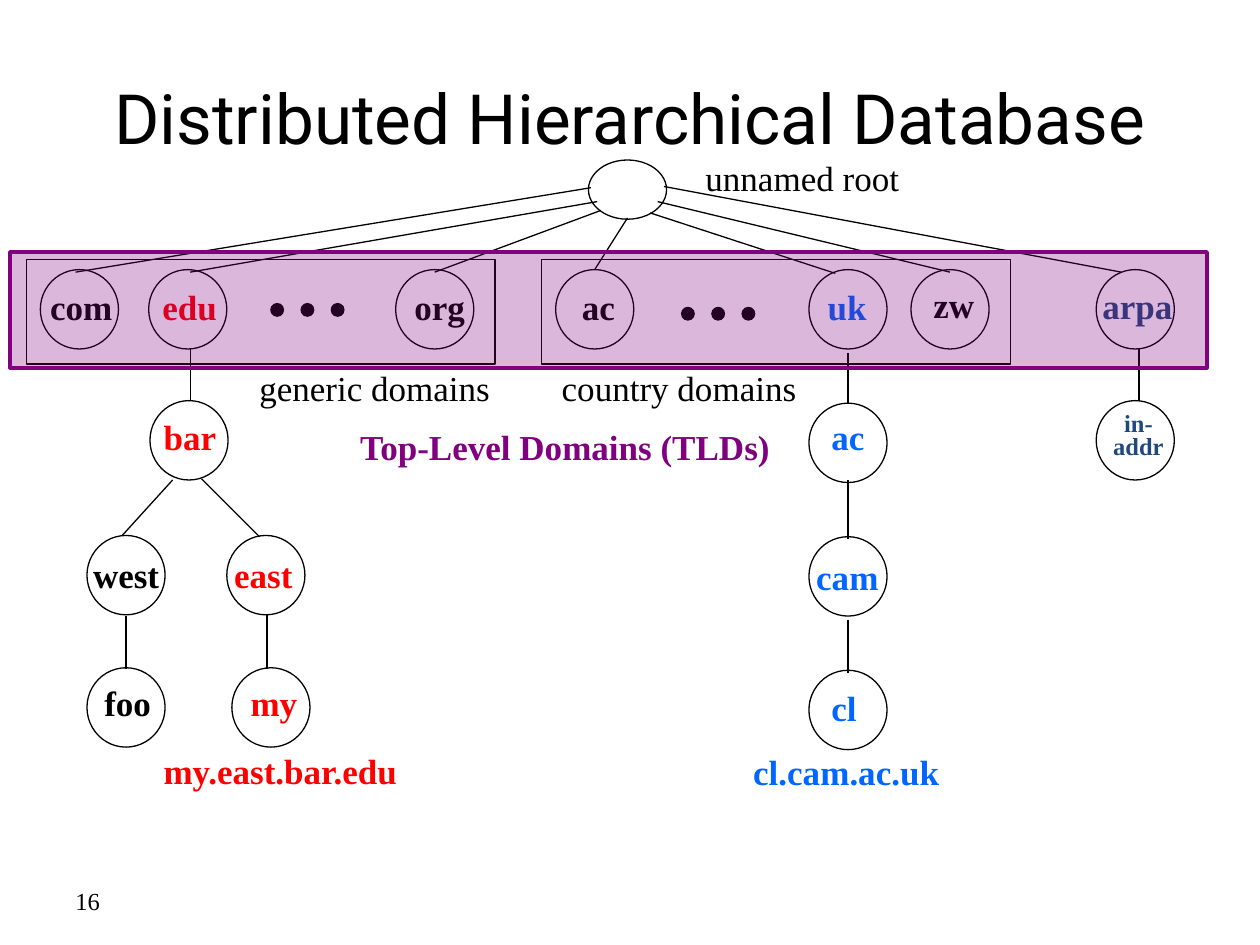
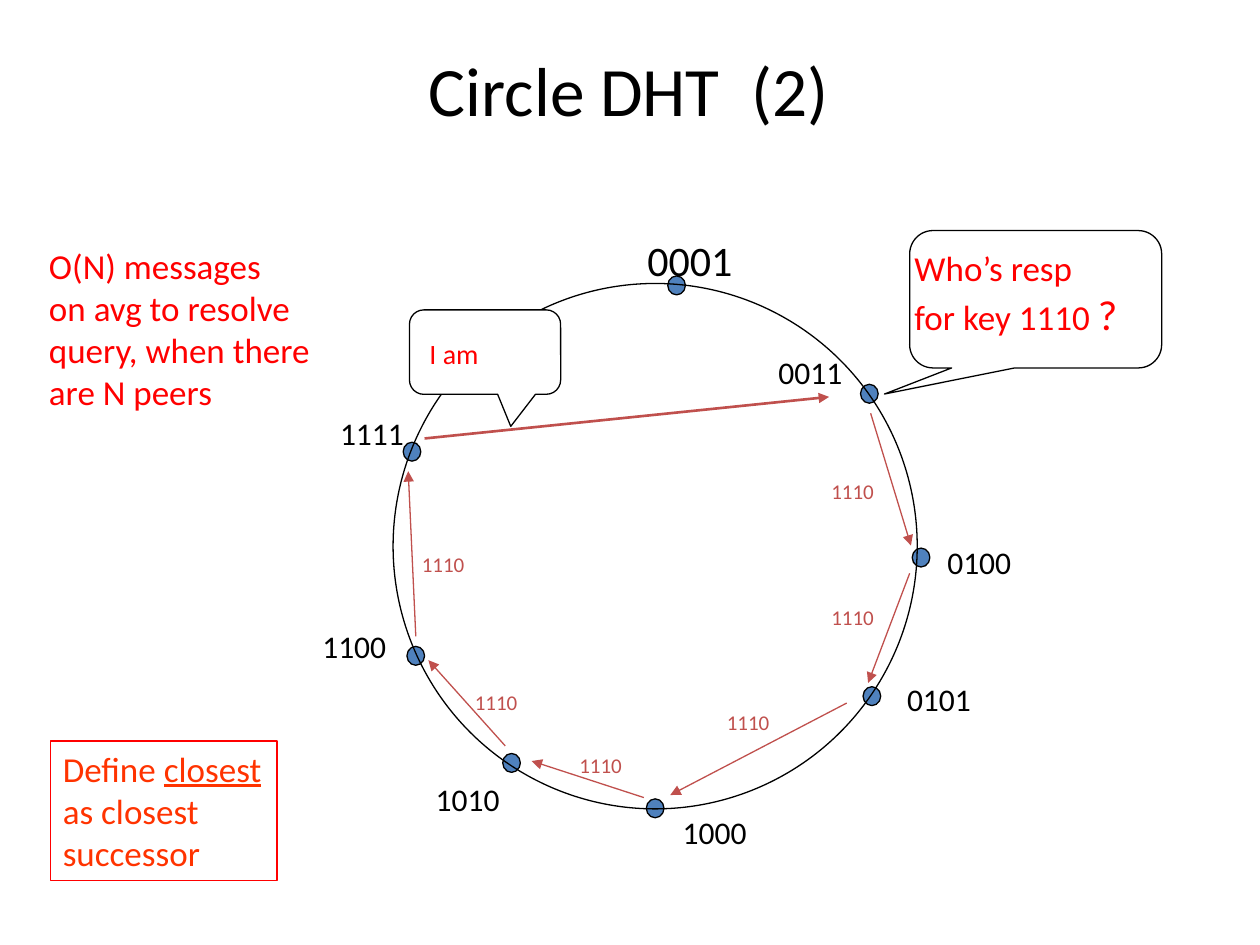
from lxml import etree
from pptx import Presentation
from pptx.dml.color import RGBColor
from pptx.enum.shapes import MSO_CONNECTOR, MSO_SHAPE
from pptx.enum.text import MSO_ANCHOR, PP_ALIGN
from pptx.oxml.ns import qn
from pptx.util import Inches, Pt

STRAIGHT = MSO_CONNECTOR.STRAIGHT
OVAL = MSO_SHAPE.OVAL
RECTANGLE = MSO_SHAPE.RECTANGLE
CALLOUT = MSO_SHAPE.ROUNDED_RECTANGULAR_CALLOUT
LEFT, CENTER = PP_ALIGN.LEFT, PP_ALIGN.CENTER
TOP, MIDDLE = MSO_ANCHOR.TOP, MSO_ANCHOR.MIDDLE

BLACK = RGBColor(0x00, 0x00, 0x00)
WHITE = RGBColor(0xFF, 0xFF, 0xFF)
RED = RGBColor(0xFF, 0x00, 0x00)
ORANGE_RED = RGBColor(0xFF, 0x33, 0x00)
BLUE = RGBColor(0x00, 0x66, 0xFF)
NAVY = RGBColor(0x1F, 0x49, 0x7D)
PURPLE = RGBColor(0x80, 0x00, 0x80)
PEER_BLUE = RGBColor(0x4F, 0x81, 0xBD)
BRICK = RGBColor(0xC0, 0x50, 0x4D)

SERIF, SANS, TITLE_SANS = "Times New Roman", "Calibri", "Roboto"
TITLE_SIZE = 39.6
THIN = 0.75


def add_text(slide, box, lines, size, font, color=BLACK, bold=False,
             align=LEFT, anchor=TOP, wrap=False, spacing=None):
    shape = slide.shapes.add_textbox(*[Inches(value) for value in box])
    frame = shape.text_frame
    frame.word_wrap = wrap
    frame.vertical_anchor = anchor
    for index, line in enumerate(lines):
        paragraph = frame.paragraphs[0] if index == 0 else frame.add_paragraph()
        paragraph.alignment = align
        paragraph.line_spacing = spacing
        for text in [line] if isinstance(line, str) else line:
            run = paragraph.add_run()
            run.text = text
            run.font.size = Pt(size)
            run.font.name = font
            run.font.bold = bold
            run.font.color.rgb = color
    return shape


def add_outline(slide, kind, box, fill=None, line=BLACK, width=THIN):
    shape = slide.shapes.add_shape(kind, *[Inches(value) for value in box])
    shape.shadow.inherit = False
    if fill is None:
        shape.fill.background()
    else:
        shape.fill.solid()
        shape.fill.fore_color.rgb = fill
    shape.line.color.rgb = line
    shape.line.width = Pt(width)
    return shape


presentation = Presentation()
presentation.slide_width = Inches(10)
presentation.slide_height = Inches(7.5)
blank_layout = presentation.slide_layouts[6]
tree_slide = presentation.slides.add_slide(blank_layout)
ring_slide = presentation.slides.add_slide(blank_layout)

tree_branches = [
    (4.69, 1.49, 0.6, 2.16), (4.74, 1.6, 1.51, 2.16),
    (4.77, 1.67, 3.45, 2.16), (4.98, 1.73, 4.72, 2.14),
    (5.27, 1.48, 8.9, 2.16), (5.22, 1.6, 7.54, 2.16),
    (5.16, 1.69, 6.63, 2.17), (1.51, 2.77, 1.51, 3.18),
    (1.37, 3.81, 0.97, 4.25), (1.6, 3.8, 2.06, 4.26),
    (1, 4.89, 1, 5.31), (2.12, 4.87, 2.12, 5.31),
    (6.73, 2.8, 6.73, 3.2), (6.73, 3.81, 6.73, 4.28),
    (6.73, 4.92, 6.73, 5.34), (9.04, 2.76, 9.04, 3.18),
]
query_hops = [
    (6.91, 3.28, 7.23, 4.33), (7.22, 4.55, 6.89, 5.42),
    (6.72, 5.58, 5.32, 6.31), (5.11, 6.33, 4.22, 6.04),
    (4.01, 5.92, 3.4, 5.24), (3.3, 5.05, 3.24, 3.74),
]
reply_hop = [(3.37, 3.48, 6.58, 3.15)]

for slide, lines, color, width, arrow in [
    (tree_slide, tree_branches, BLACK, THIN, False),
    (ring_slide, query_hops, BRICK, THIN, True),
    (ring_slide, reply_hop, BRICK, 1.5, True),
]:
    for ends in lines:
        connector = slide.shapes.add_connector(STRAIGHT, *[Inches(value) for value in ends])
        connector.line.color.rgb = color
        connector.line.width = Pt(width)
        properties = connector._element.spPr
        if arrow:
            etree.SubElement(properties.find(qn("a:ln")), qn("a:tailEnd"), type="triangle")
        etree.SubElement(properties, qn("a:effectLst"))

add_text(tree_slide, (0.5, 0.3, 9, 1.25), ["Distributed Hierarchical Database"],
         TITLE_SIZE, TITLE_SANS, align=CENTER, anchor=MIDDLE, wrap=True)
add_text(tree_slide, (0.5, 6.95, 2.33, 0.4), ["16"], 14, SERIF, anchor=MIDDLE, wrap=True)

add_outline(tree_slide, OVAL, (4.67, 1.27, 0.62, 0.47))
for group_left in (0.21, 4.3):
    add_outline(tree_slide, RECTANGLE, (group_left, 2.06, 3.72, 0.83))
for first_dot, dot_top in [(2.15, 2.41), (5.41, 2.44)]:
    for step in range(3):
        add_outline(tree_slide, OVAL, (first_dot + 0.24 * step, dot_top, 0.1, 0.1), BLACK)

domains = [
    (0.32, 2.14, "com", 0.3, 2.22, BLACK),
    (1.18, 2.14, "edu", 1.19, 2.22, RED),
    (3.14, 2.14, "org", 3.19, 2.22, BLACK),
    (4.41, 2.14, "ac", 4.52, 2.22, BLACK),
    (6.42, 2.14, "uk", 6.47, 2.22, BLUE),
    (7.23, 2.14, "zw", 7.31, 2.2, BLACK),
    (8.7, 2.14, "arpa", 8.65, 2.21, NAVY),
    (1.19, 3.18, "bar", 1.2, 3.25, RED),
    (0.69, 4.25, "west", 0.64, 4.34, BLACK),
    (1.8, 4.25, "east", 1.76, 4.34, RED),
    (0.69, 5.3, "foo", 0.73, 5.36, BLACK),
    (1.84, 5.3, "my", 1.89, 5.36, RED),
    (6.42, 3.2, "ac", 6.5, 3.25, BLUE),
    (6.42, 4.26, "cam", 6.38, 4.36, BLUE),
    (6.42, 5.32, "cl", 6.5, 5.4, BLUE),
]
for node_left, node_top, name, left, top, color in domains:
    add_outline(tree_slide, OVAL, (node_left, node_top, 0.62, 0.63))
    add_text(tree_slide, (left, top, 0.8, 0.43), [name], 20, SERIF, color, bold=True)

add_outline(tree_slide, OVAL, (8.7, 3.18, 0.62, 0.63))
add_text(tree_slide, (8.73, 3.23, 0.61, 0.49), ["in-", "addr"], 14, SERIF, NAVY,
         bold=True, align=CENTER, spacing=0.8)

for caption, left, top, width, color, bold in [
    ("unnamed root", 5.5, 1.19, 1.78, BLACK, False),
    ("generic domains", 1.96, 2.86, 2.07, BLACK, False),
    ("country domains", 4.36, 2.86, 2.1, BLACK, False),
    ("my.east.bar.edu", 1.2, 5.9, 2.13, RED, True),
    ("cl.cam.ac.uk", 5.88, 5.91, 1.73, BLUE, True),
]:
    add_text(tree_slide, (left, top, width, 0.43), [caption], 20, SERIF, color, bold)

tld_band = add_outline(tree_slide, RECTANGLE, (0.08, 2, 9.5, 0.92), PURPLE, PURPLE, 2)
band_color = tld_band._element.spPr.find(qn("a:solidFill"))[0]
etree.SubElement(band_color, qn("a:alpha"), val="28000")
add_text(tree_slide, (2.75, 3.33, 3.47, 0.43), ["Top-Level Domains (TLDs)"], 20, SERIF,
         PURPLE, bold=True, align=CENTER, anchor=MIDDLE)

add_text(ring_slide, (0.74, 0.37, 8.5, 0.67), ["Circle DHT  (2)"],
         TITLE_SIZE, SANS, align=CENTER, anchor=MIDDLE, wrap=True)

peers = [
    ("0001", 5.3, 2.19, 5.04, 1.81, 24),
    ("0011", 6.83, 3.05, 6.08, 2.75, 18),
    ("0100", 7.24, 4.35, 7.42, 4.26, 18),
    ("0101", 6.85, 5.45, 7.1, 5.35, 18),
    ("1000", 5.13, 6.34, 5.32, 6.4, 18),
    ("1010", 3.99, 5.98, 3.36, 6.14, 18),
    ("1100", 3.23, 5.13, 2.46, 4.93, 18),
    ("1111", 3.2, 3.51, 2.6, 3.24, 18),
]
for name, dot_left, dot_top, left, top, size in peers:
    add_outline(ring_slide, OVAL, (dot_left, dot_top, 0.14, 0.15), PEER_BLUE)
    add_text(ring_slide, (left, top, 0.88, 0.51), [name], size, SANS)
add_outline(ring_slide, OVAL, (3.12, 2.25, 4.16, 4.17))

for left, top in [(6.5, 3.75), (6.5, 4.75), (5.67, 5.58),
                  (4.5, 5.92), (3.67, 5.42), (3.25, 4.33)]:
    add_text(ring_slide, (left, top, 0.54, 0.3), ["1110"], 12, SANS, BRICK)

for box, fill, adjustments in [
    ((7.22, 1.83, 2, 1.09), None, (-0.6, 0.69, 0.17)),
    ((3.25, 2.46, 1.2, 0.67), WHITE, (0.17, 0.88, 0.17)),
]:
    callout = add_outline(ring_slide, CALLOUT, box, fill)
    for index, value in enumerate(adjustments):
        callout.adjustments[index] = value

question = add_text(ring_slide, (7.16, 1.91, 1.86, 0.92),
                    ["Who’s resp", ["for key 1110 ", "?"]], 20, SANS, RED)
question.text_frame.paragraphs[1].runs[1].font.size = Pt(24)
add_text(ring_slide, (3.31, 2.62, 1.42, 0.37), ["I am"], 16, SANS, RED, wrap=True)
add_text(ring_slide, (0.29, 1.89, 2.31, 1.65),
         ["O(N) messages", "on avg to resolve", "query, when there", "are N peers"],
         20, SANS, RED)

definition = add_text(ring_slide, (0.4, 5.88, 1.8, 1.11),
                      [["Define ", "closest"], "as closest", "successor"],
                      20, SANS, ORANGE_RED)
definition.text_frame.paragraphs[0].runs[1].font.underline = True
definition.line.color.rgb = RED
definition.line.width = Pt(THIN)

presentation.save("out.pptx")
